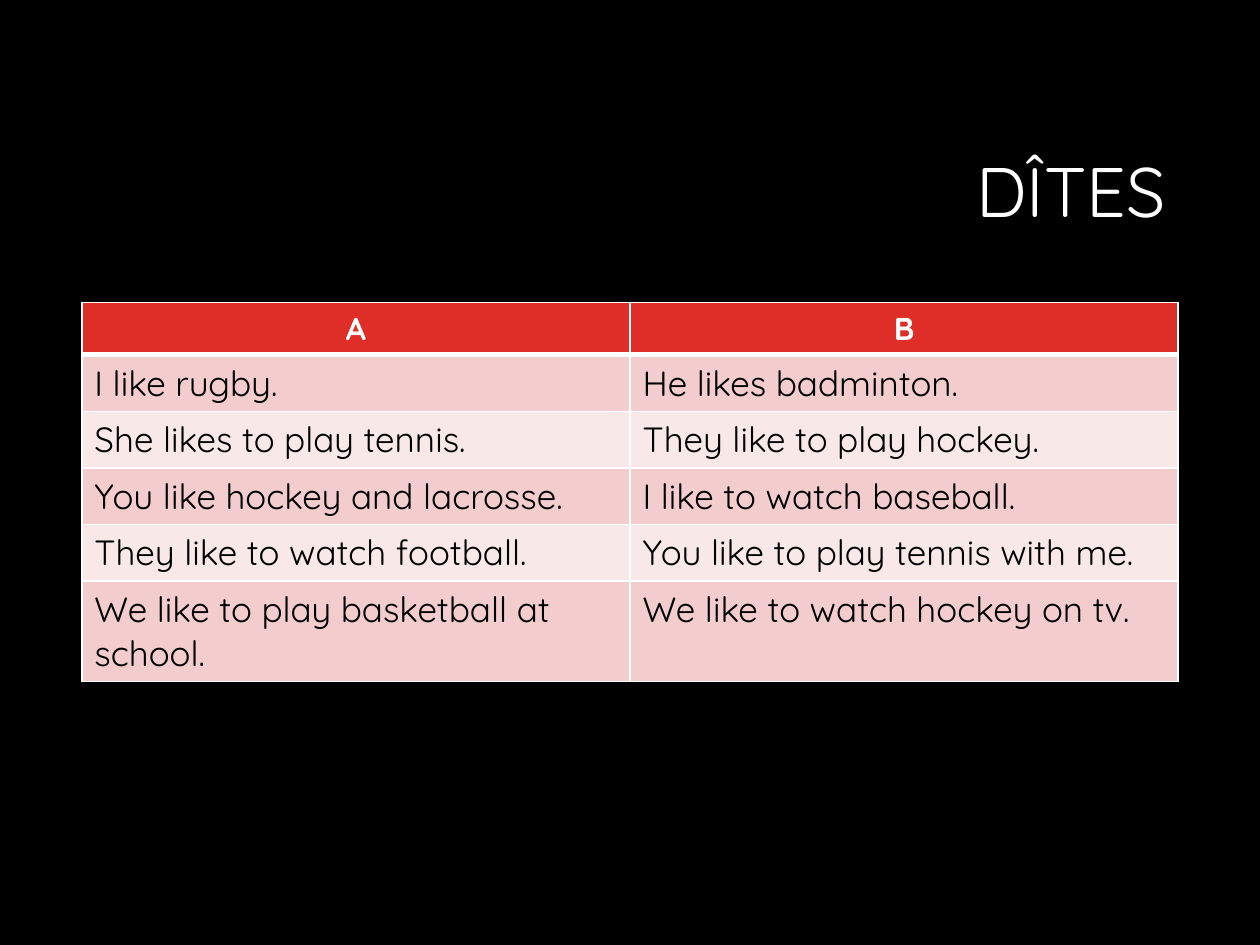
import pptx
import pptx.util
import pptx.dml.color
import pptx.enum.text
import pptx.oxml.ns
from lxml import etree

Cm, Pt = pptx.util.Cm, pptx.util.Pt
RGBColor = pptx.dml.color.RGBColor
ALIGN = pptx.enum.text.PP_ALIGN
ANCHOR = pptx.enum.text.MSO_ANCHOR

# Content
TITLE = "DÎTES"
ROWS = [
    ("A", "B"),
    ("I like rugby.", "He likes badminton."),
    ("She likes to play tennis.", "They like to play hockey."),
    ("You like hockey and lacrosse.", "I like to watch baseball."),
    ("They like to watch football.", "You like to play tennis with me."),
    ("We like to play basketball at school.", "We like to watch hockey on tv."),
]

# Look
BLACK = RGBColor(0x00, 0x00, 0x00)
WHITE = RGBColor(0xFF, 0xFF, 0xFF)
RED = RGBColor(0xDF, 0x2E, 0x28)
PINK = RGBColor(0xF3, 0xCD, 0xCD)
PALE = RGBColor(0xF9, 0xE8, 0xE8)
FACE = "Quicksand"
HEAD = {"size": Pt(18), "bold": True, "color": WHITE}
BODY = {"size": Pt(20), "bold": False, "color": BLACK}
LARGE = {"size": Pt(40), "bold": False, "color": WHITE}
THIN, THICK = Pt(1), Pt(3)

# Layout
LEFT, TOP = Cm(1.65), Cm(6.1)
COL, ROW = Cm(11.05), Cm(1.04)


def write(frame, text, look, align):
    para = frame.paragraphs[0]
    para.alignment = align
    run = para.add_run()
    run.text = text
    run.font.name = FACE
    for key, value in look.items():
        if key == "color":
            run.font.color.rgb = value
        else:
            setattr(run.font, key, value)


def edge(cell, sides):
    props = cell._tc.get_or_add_tcPr()
    for side, width in sides.items():
        line = etree.SubElement(props, pptx.oxml.ns.qn(f"a:ln{side}"), w=str(width))
        fill = etree.SubElement(line, pptx.oxml.ns.qn("a:solidFill"))
        etree.SubElement(fill, pptx.oxml.ns.qn("a:srgbClr"), val=str(WHITE))


# Slide
deck = pptx.Presentation()
deck.slide_width, deck.slide_height = Cm(25.4), Cm(19.05)
slide = deck.slides.add_slide(deck.slide_layouts[5])
slide.background.fill.solid()
slide.background.fill.fore_color.rgb = BLACK

# Title
title = slide.shapes.title
place = {"left": Cm(6.05), "top": Cm(2.13), "width": Cm(17.7), "height": Cm(3.58)}
for key, value in place.items():
    setattr(title, key, value)
title.text_frame.vertical_anchor = ANCHOR.MIDDLE
write(title.text_frame, TITLE, LARGE, ALIGN.RIGHT)
title.text_frame.paragraphs[0].line_spacing = 0.9

# Table
count, span = len(ROWS), len(ROWS[0])
grid = slide.shapes.add_table(count, span, LEFT, TOP, COL * span, ROW * count).table
for col in grid.columns:
    col.width = COL
for r, texts in enumerate(ROWS):
    grid.rows[r].height = ROW
    head = r == 0
    tint = RED if head else PINK if r % 2 else PALE
    sides = {"L": THIN, "R": THIN, "T": THICK if r == 1 else THIN,
             "B": THICK if head else THIN}
    for c, text in enumerate(texts):
        cell = grid.cell(r, c)
        edge(cell, sides)
        cell.fill.solid()
        cell.fill.fore_color.rgb = tint
        write(cell.text_frame, text, HEAD if head else BODY,
              ALIGN.CENTER if head else ALIGN.LEFT)

deck.save("out.pptx")
